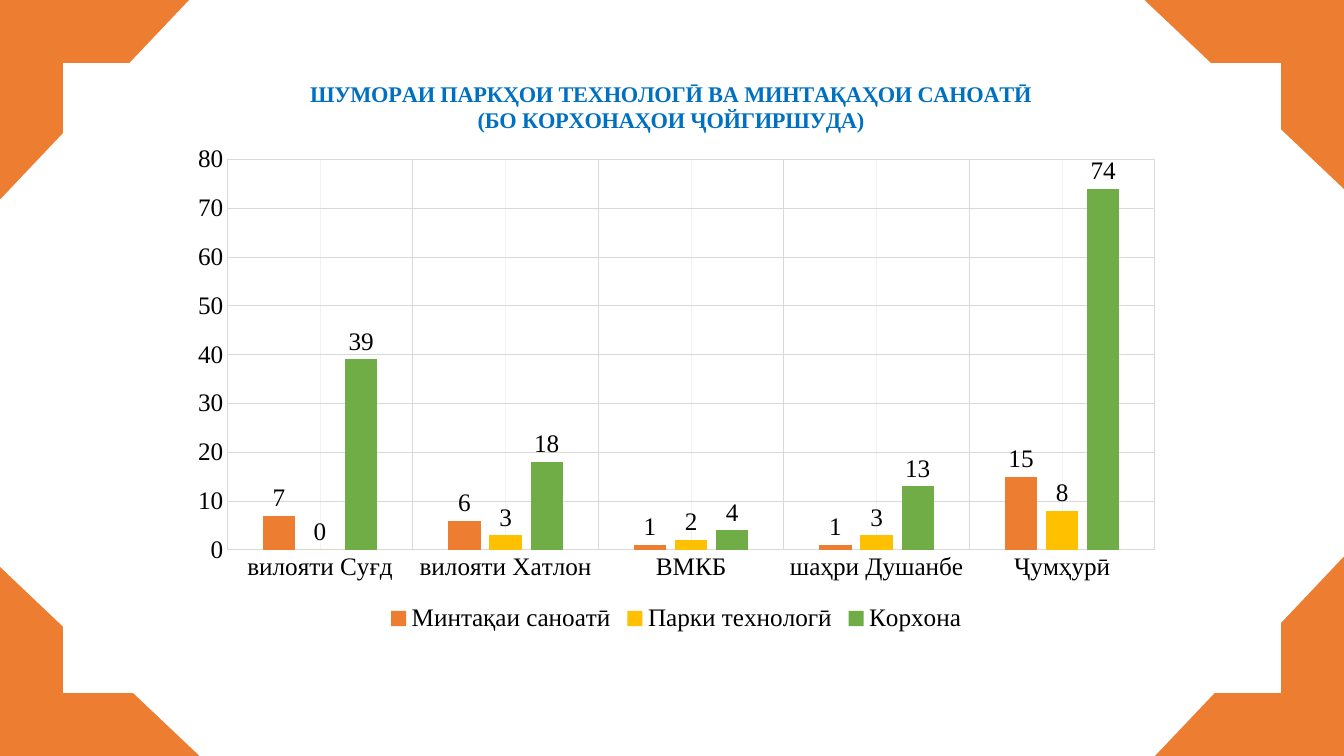
import copy

import pptx
import pptx.chart.data
import pptx.dml.color
import pptx.enum.chart
import pptx.enum.shapes
import pptx.util
from lxml import etree
from pptx.oxml.ns import qn

SCALE = 9525
WIDTH, HEIGHT = 1280, 720
FONT = "Times New Roman"
ORANGE = "ED7D31"
GRID = "D9D9D9"
MINOR_GRID = "F2F2F2"
CORNER_WIDTH, CORNER_HEIGHT = 180, 190

TITLE = [
    "ШУМОРАИ ПАРКҲОИ ТЕХНОЛОГӢ ВА МИНТАҚАҲОИ САНОАТӢ",
    "(БО КОРХОНАҲОИ ҶОЙГИРШУДА)",
]
REGIONS = ["вилояти Суғд", "вилояти Хатлон", "ВМКБ", "шаҳри Душанбе", "Ҷумҳурӣ"]
SERIES = [
    ("Минтақаи саноатӣ", (7, 6, 1, 1, 15), ORANGE),
    ("Парки технологӣ", (0, 3, 2, 3, 8), "FFC000"),
    ("Корхона", (39, 18, 4, 13, 74), "70AD47"),
]


def px(length):
    return pptx.util.Emu(int(length * SCALE))


def color(value):
    return pptx.dml.color.RGBColor.from_string(value)


def assign(target, values):
    for name, value in values.items():
        setattr(target, name, value)


def style_font(font, size=18, fill="000000", bold=False):
    assign(font, {"name": FONT, "size": pptx.util.Pt(size), "bold": bold})
    font.color.rgb = color(fill)


def style_line(line, fill):
    line.color.rgb = color(fill)
    line.width = pptx.util.Pt(0.75)


def set_layout(element, index, values):
    for old in element.findall(qn("c:layout")):
        element.remove(old)
    layout = etree.Element(qn("c:layout"))
    manual = etree.SubElement(layout, qn("c:manualLayout"))
    for name, value in values.items():
        etree.SubElement(manual, qn("c:" + name)).set("val", str(value))
    element.insert(index, layout)


def add_title(chart):
    frame = chart.chart_title.text_frame
    for index, text in enumerate(TITLE):
        paragraph = frame.add_paragraph() if index else frame.paragraphs[0]
        run = paragraph.add_run()
        run.text = text
        style_font(run.font, 16, "0070C0", True)
    chart.chart_title.include_in_layout = False
    position = {"xMode": "edge", "yMode": "edge", "x": 0.13, "y": 0.04}
    set_layout(chart.chart_title._element, 1, position)


def add_minor_gridlines(axis):
    axis.has_minor_gridlines = True
    major = axis._element.find(qn("c:majorGridlines"))
    minor = axis._element.find(qn("c:minorGridlines"))
    properties = copy.deepcopy(major.find(qn("c:spPr")))
    for fill in properties.iter(qn("a:srgbClr")):
        fill.set("val", MINOR_GRID)
    minor.append(properties)


def style_axes(chart):
    category, value = chart.category_axis, chart.value_axis
    for axis in (category, value):
        assign(axis, {
            "has_major_gridlines": True,
            "major_tick_mark": pptx.enum.chart.XL_TICK_MARK.NONE,
            "minor_tick_mark": pptx.enum.chart.XL_TICK_MARK.NONE,
        })
        style_line(axis.major_gridlines.format.line, GRID)
        style_font(axis.tick_labels.font)
    add_minor_gridlines(category)
    style_line(category.format.line, GRID)
    assign(value, {"minimum_scale": 0, "maximum_scale": 80, "major_unit": 10})
    value.format.line.fill.background()


def add_park_chart(slide, left, top, width, height):
    data = pptx.chart.data.CategoryChartData()
    data.categories = REGIONS
    for name, values, fill in SERIES:
        data.add_series(name, values)
    kind = pptx.enum.chart.XL_CHART_TYPE.COLUMN_CLUSTERED
    box = map(px, (left, top, width, height))
    chart = slide.shapes.add_chart(kind, *box, data).chart
    style_font(chart.font)
    add_title(chart)
    style_axes(chart)
    assign(chart.plots[0], {"gap_width": 219, "overlap": -27, "vary_by_categories": False})
    for series, (name, values, fill) in zip(chart.plots[0].series, SERIES):
        series.format.fill.solid()
        series.format.fill.fore_color.rgb = color(fill)
        labels = series.data_labels
        assign(labels, {
            "show_value": True,
            "position": pptx.enum.chart.XL_LABEL_POSITION.OUTSIDE_END,
        })
        style_font(labels.font)
    chart.has_legend = True
    assign(chart.legend, {
        "position": pptx.enum.chart.XL_LEGEND_POSITION.BOTTOM,
        "include_in_layout": False,
    })
    style_font(chart.legend.font)
    plot_box = {
        "layoutTarget": "inner", "xMode": "edge", "yMode": "edge",
        "x": 0.05, "y": 0.18, "w": 0.93, "h": 0.67,
    }
    plot_area = chart._chartSpace.find(qn("c:chart")).find(qn("c:plotArea"))
    set_layout(plot_area, 0, plot_box)


def add_corner(slide, center_x, center_y, rotation):
    shape = slide.shapes.add_shape(
        pptx.enum.shapes.MSO_SHAPE.HALF_FRAME,
        px(center_x - CORNER_WIDTH / 2), px(center_y - CORNER_HEIGHT / 2),
        px(CORNER_WIDTH), px(CORNER_HEIGHT),
    )
    shape.rotation = rotation
    shape.shadow.inherit = False
    shape.fill.solid()
    shape.fill.fore_color.rgb = color(ORANGE)
    shape.line.fill.background()


def add_corners(slide, left, top, width, height):
    for rotation in (0, 90, 180, 270):
        across, down = CORNER_WIDTH / 2, CORNER_HEIGHT / 2
        if rotation in (90, 270):
            across, down = down, across
        center_x = left + width - across if rotation in (90, 180) else left + across
        center_y = top + height - down if rotation in (180, 270) else top + down
        add_corner(slide, center_x, center_y, rotation)


def main():
    presentation = pptx.Presentation()
    assign(presentation, {"slide_width": px(WIDTH), "slide_height": px(HEIGHT)})
    slide = presentation.slides.add_slide(presentation.slide_layouts[6])
    add_park_chart(slide, 169, 52, 950, 555)
    add_corners(slide, 0, 0, WIDTH, HEIGHT)
    presentation.save("out.pptx")


if __name__ == "__main__":
    main()
